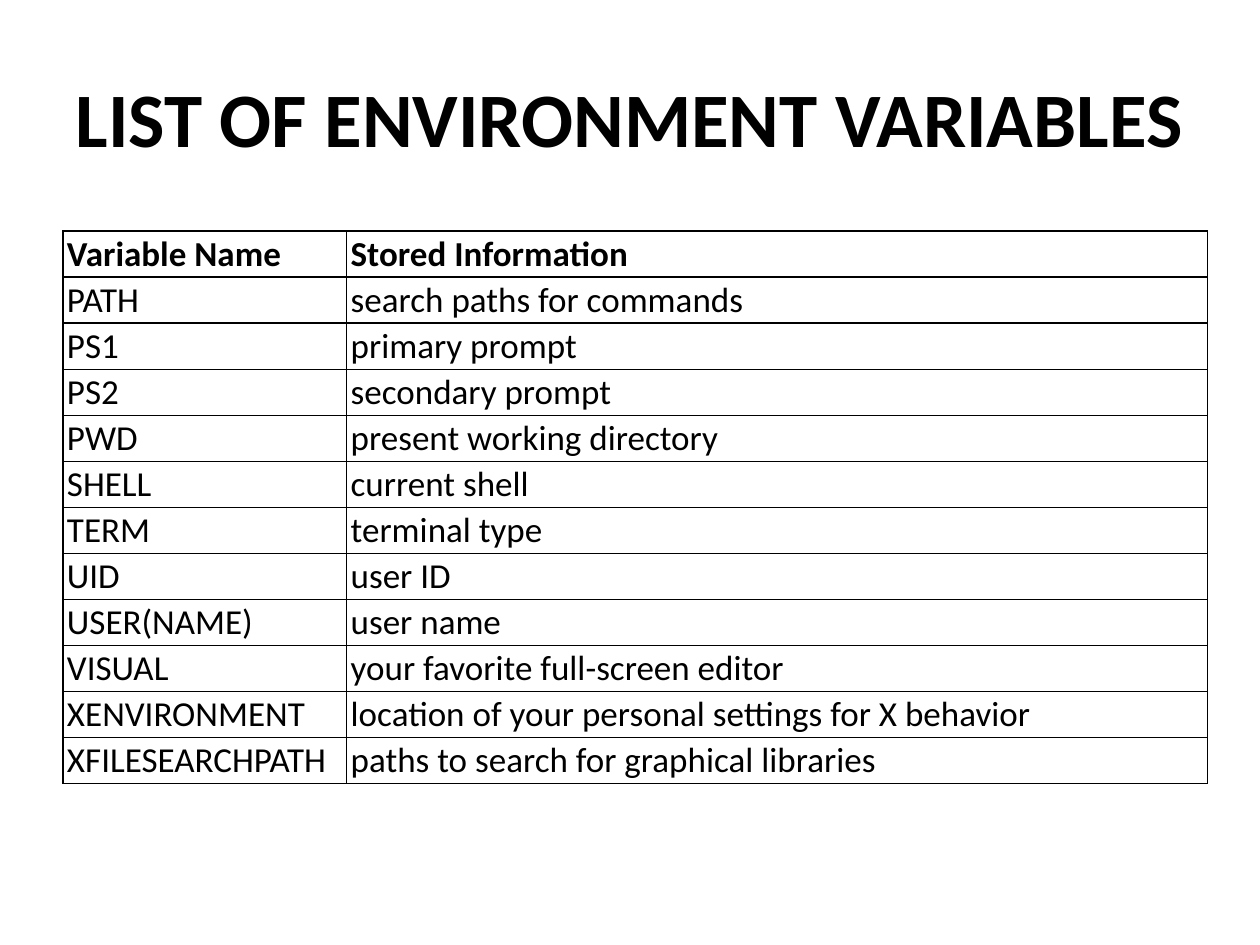
import pptx
import pptx.dml.color
import pptx.enum.text
import pptx.oxml
import pptx.oxml.ns
import pptx.util

Cm = pptx.util.Cm
Pt = pptx.util.Pt
ALIGN = pptx.enum.text.PP_ALIGN
MIDDLE = pptx.enum.text.MSO_ANCHOR.MIDDLE

COLORS = {"text": "000000", "border": "000000"}
FONT = "Calibri"

VARIABLES = [
    ("Variable Name", "Stored Information"),
    ("PATH", "search paths for commands"),
    ("PS1", "primary prompt"),
    ("PS2", "secondary prompt"),
    ("PWD", "present working directory"),
    ("SHELL", "current shell"),
    ("TERM", "terminal type"),
    ("UID", "user ID"),
    ("USER(NAME)", "user name"),
    ("VISUAL", "your favorite full-screen editor"),
    ("XENVIRONMENT", "location of your personal settings for X behavior"),
    ("XFILESEARCHPATH", "paths to search for graphical libraries"),
]


def set_attrs(obj, values):
    for name, value in values.items():
        setattr(obj, name, value)


def write(tf, text, size, bold, align):
    p = tf.paragraphs[0]
    p.alignment = align
    r = p.add_run()
    r.text = text
    set_attrs(r.font, {"name": FONT, "size": Pt(size), "bold": bold})
    r.font.color.rgb = pptx.dml.color.RGBColor.from_string(COLORS["text"])


def add_borders(cell):
    tc_pr = cell._tc.get_or_add_tcPr()
    # Border lines come before the fill in a cell's properties
    for i, side in enumerate(("lnL", "lnR", "lnT", "lnB")):
        ln = pptx.oxml.parse_xml(
            f'<a:{side} {pptx.oxml.ns.nsdecls("a")} w="{Pt(1)}"><a:solidFill>'
            f'<a:srgbClr val="{COLORS["border"]}"/></a:solidFill></a:{side}>')
        tc_pr.insert(i, ln)


def add_title(slide, left, top, width, height):
    s = slide.shapes.add_textbox(left, top, width, height)
    tf = s.text_frame
    set_attrs(tf, {"word_wrap": True, "vertical_anchor": MIDDLE})
    write(tf, "LIST OF ENVIRONMENT VARIABLES", 44, True, ALIGN.CENTER)


def add_variable_table(slide, left, top, width, height):
    s = slide.shapes.add_table(len(VARIABLES), 2, left, top, width, height)
    table = s.table
    set_attrs(table, {"first_row": False, "horz_banding": False})

    # Name column is fixed, the description takes the rest
    name_width = Cm(5.72)
    table.columns[0].width = name_width
    table.columns[1].width = width - name_width

    # Rows have a minimum height and grow to fit their text
    for row in table.rows:
        row.height = Cm(0.76)
    s.height = height

    cell_format = {
        "margin_left": Cm(0.08), "margin_right": Cm(0.08),
        "margin_top": Cm(0.04), "margin_bottom": Cm(0.04),
        "vertical_anchor": MIDDLE,
    }
    for i, texts in enumerate(VARIABLES):
        for j, text in enumerate(texts):
            cell = table.cell(i, j)
            set_attrs(cell, cell_format)
            cell.fill.background()
            add_borders(cell)
            write(cell.text_frame, text, 20, i == 0, ALIGN.JUSTIFY)


def main():
    prs = pptx.Presentation()
    set_attrs(prs, {"slide_width": Cm(25.4), "slide_height": Cm(19.05)})
    slide = prs.slides.add_slide(prs.slide_layouts[6])
    add_title(slide, Cm(1.27), Cm(0.76), Cm(22.86), Cm(3.18))
    add_variable_table(slide, Cm(1.27), Cm(4.66), Cm(23.07), Cm(11.13))
    prs.save("out.pptx")


if __name__ == "__main__":
    main()
